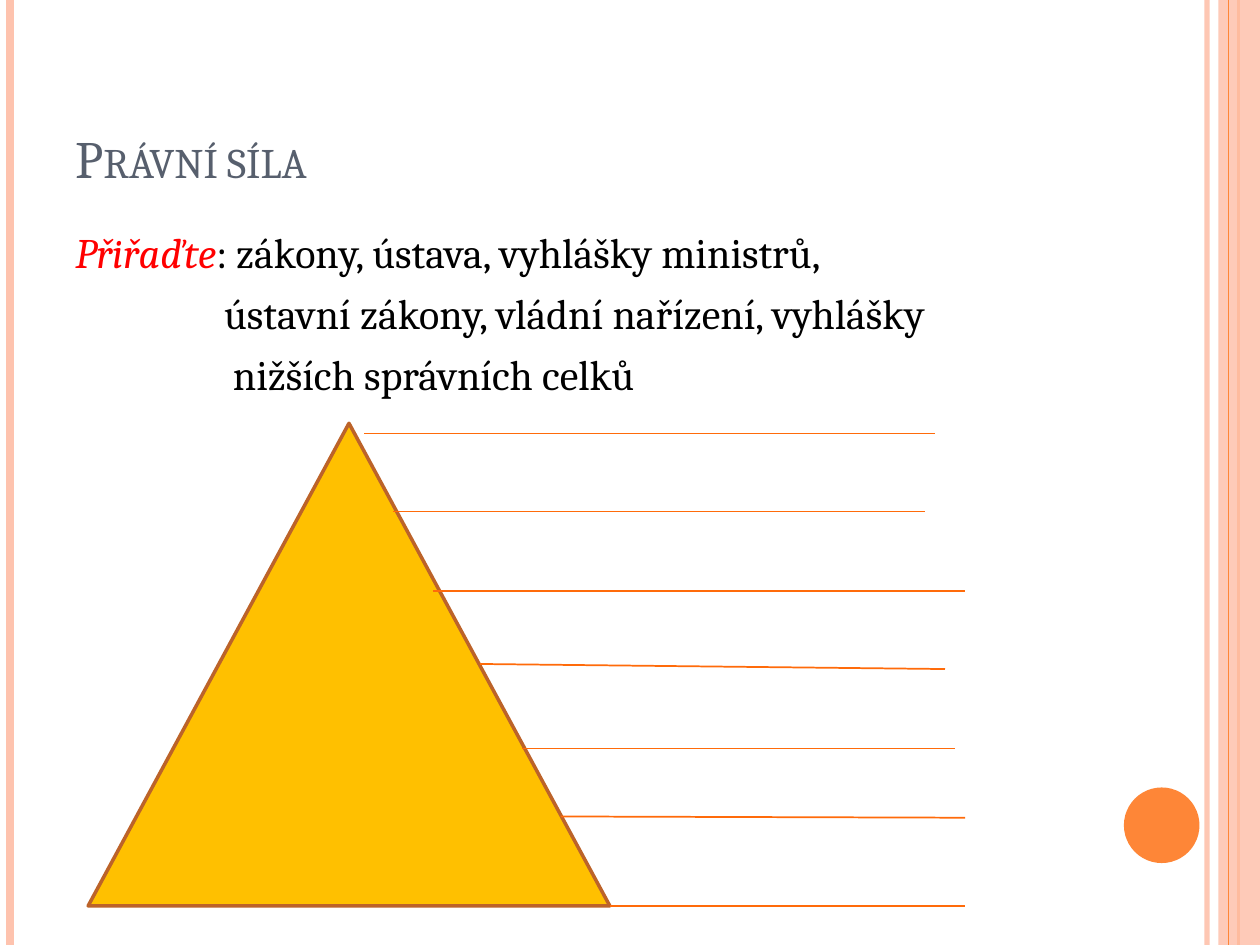
from pptx import Presentation
from pptx import util as u
from pptx.dml.color import RGBColor
from pptx.enum import shapes, text
from pptx.oxml import ns, xmlchemy

COLS, ROWS = 100, 75  # grid over the whole slide
FONT = "Cambria"
ORANGE, PEACH, RUNG = "FE8637", "FEC3AE", "FF6B0A"

deck = Presentation()
deck.slide_width, deck.slide_height = u.Inches(10), u.Inches(7.5)
CELL_W, CELL_H = deck.slide_width / COLS, deck.slide_height / ROWS


def cols(count):
    return u.Emu(round(count * CELL_W))


def rows(count):
    return u.Emu(round(count * CELL_H))


def color(hex_code):
    return RGBColor.from_string(hex_code)


def set_opacity(fill, percent):
    """Make a solid fill partly transparent."""
    tone = fill._xPr.find(".//" + ns.qn("a:srgbClr"))
    alpha = xmlchemy.OxmlElement("a:alpha")
    alpha.set("val", str(percent * 1000))
    tone.append(alpha)


def add_line(page, start, end, tone, weight, opacity=None):
    line = page.shapes.add_connector(
        shapes.MSO_CONNECTOR.STRAIGHT,
        cols(start[0]), rows(start[1]), cols(end[0]), rows(end[1]))
    line.line.color.rgb = color(tone)
    line.line.width = u.Pt(weight)
    line._element.spPr.append(xmlchemy.OxmlElement("a:effectLst"))
    if opacity:
        set_opacity(line.line.fill, opacity)


def add_figure(page, kind, box, fill, outline=None, weight=0, opacity=None):
    left, top, width, height = box
    figure = page.shapes.add_shape(
        kind, cols(left), rows(top), cols(width), rows(height))
    figure.shadow.inherit = False
    figure.fill.solid()
    figure.fill.fore_color.rgb = color(fill)
    if opacity:
        set_opacity(figure.fill, opacity)
    if outline:
        figure.line.color.rgb = color(outline)
        figure.line.width = u.Pt(weight)
    else:
        figure.line.fill.background()


def add_frame(page, box, anchor):
    left, top, width, height = box
    frame = page.shapes.add_textbox(
        cols(left), rows(top), cols(width), rows(height)).text_frame
    frame.word_wrap = True
    frame.vertical_anchor = anchor
    return frame


def add_span(para, words, tone, **formats):
    span = para.add_run()
    span.text = words
    span.font.color.rgb = color(tone)
    for name, value in {"name": FONT, **formats}.items():
        setattr(span.font, name, value)
    return span


def draw_borders(page, box):
    """Vertical stripes on both edges and the round badge."""
    left, top, width, height = box

    def stripe(col, tone, weight, opacity=None):
        add_line(page, (left + col, top), (left + col, top + height),
                 tone, weight, opacity)

    stripe(95.8, PEACH, 3, 93)
    stripe(0.8, PEACH, 4.5)
    stripe(98.3, ORANGE, 1.5)
    add_figure(page, shapes.MSO_SHAPE.RECTANGLE,
               (left + 96.7, top, width - 96.7, height), PEACH, opacity=87)
    stripe(97.5, ORANGE, 0.75)
    add_figure(page, shapes.MSO_SHAPE.OVAL,
               (left + 89.2, top + 62.5, 6, 6), ORANGE)


def write_title(page, box):
    frame = add_frame(page, box, text.MSO_ANCHOR.BOTTOM)
    span = add_span(frame.paragraphs[0], "Právní síla", "575F6D", size=u.Pt(30))
    span._r.get_or_add_rPr().set("cap", "small")


def write_task(page, box):
    frame = add_frame(page, box, text.MSO_ANCHOR.TOP)
    lines = [  # indent in columns, then the spans
        (0, [("Přiřaďte", "FF0000", True),
             (": zákony, ústava, vyhlášky ministrů,", "000000", False)]),
        (11.8, [("ústavní zákony, vládní nařízení, vyhlášky", "000000", False)]),
        (12.5, [("nižších správních celků", "000000", False)]),
    ]
    for number, (indent, spans) in enumerate(lines):
        para = frame.add_paragraph() if number else frame.paragraphs[0]
        para.space_before = u.Pt(6)
        para._p.get_or_add_pPr().set("marL", str(cols(indent)))
        for words, tone, italic in spans:
            add_span(para, words, tone, size=u.Pt(24), italic=italic)


def draw_pyramid(page, box):
    """Triangle with a blank answer line for each level."""
    left, top, width, height = box
    add_figure(page, shapes.MSO_SHAPE.ISOSCELES_TRIANGLE, box,
               "FFC000", "BC6329", 2)
    levels = [  # start column, end column, start row, end row
        (21.9, 67.2, 0.8, 0.8),
        (24.2, 66.4, 7, 7),
        (27.4, 69.6, 13.3, 13.3),
        (31.1, 68, 19.1, 19.5),
        (34.4, 68.8, 25.8, 25.8),
        (37.5, 69.6, 31.2, 31.3),
        (width, 69.6, height, height),
    ]
    for start, end, start_row, end_row in levels:
        add_line(page, (left + start, top + start_row),
                 (left + end, top + end_row), RUNG, 1)


def main():
    page = deck.slides.add_slide(deck.slide_layouts[6])
    draw_borders(page, (0, 0, COLS, ROWS))
    write_title(page, (5, 3, 81.7, 12.5))
    write_task(page, (5, 17.5, 81.7, 53.3))
    draw_pyramid(page, (7, 33.6, 41.4, 38.3))
    deck.save("out.pptx")


if __name__ == "__main__":
    main()
